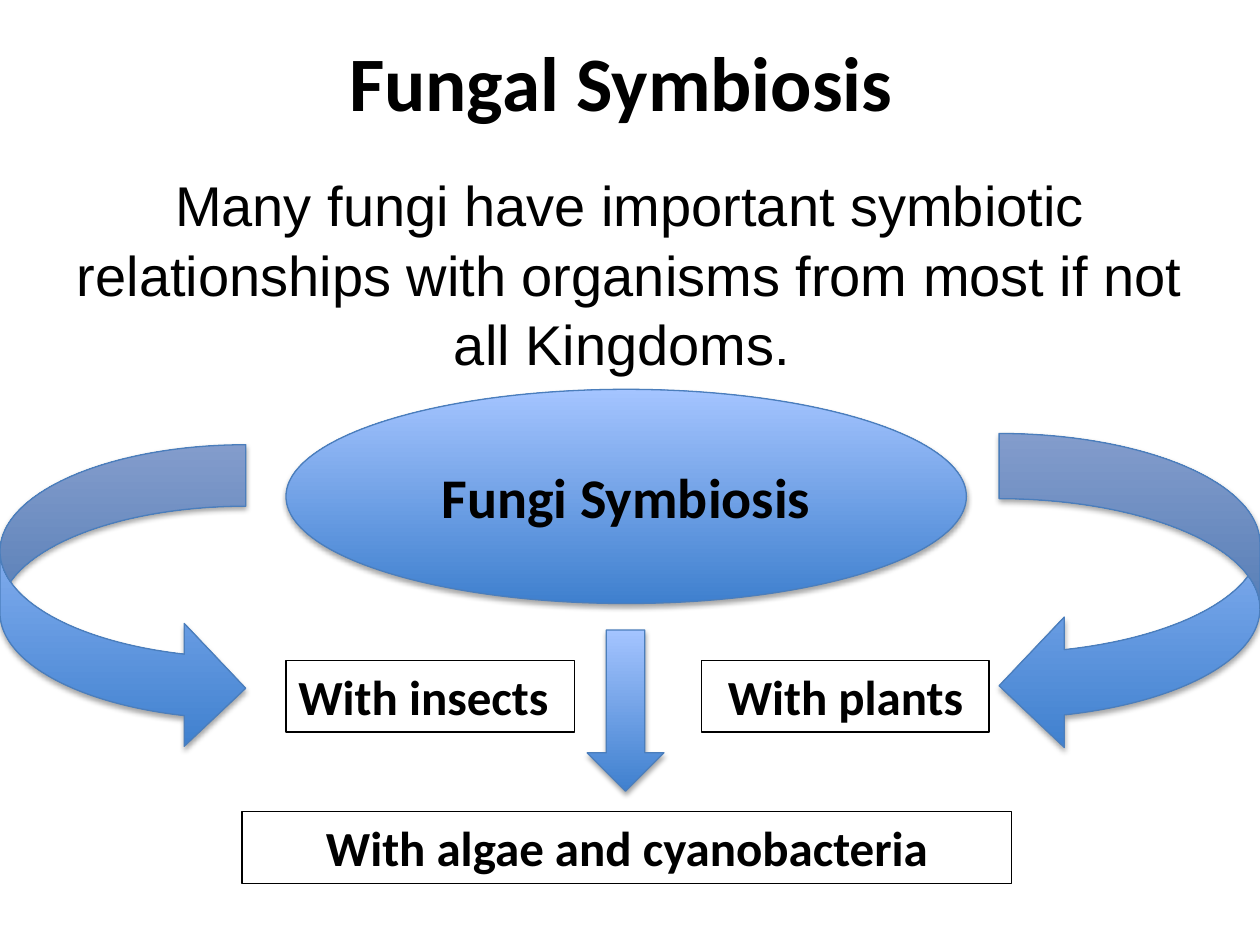
"""Build the Fungal Symbiosis slide."""
from lxml import etree
from pptx import Presentation
from pptx.dml.color import RGBColor
from pptx.enum.shapes import MSO_SHAPE
from pptx.enum.text import MSO_ANCHOR, PP_ALIGN
from pptx.oxml.ns import qn
from pptx.util import Inches, Pt

LEFT, CENTER = PP_ALIGN.LEFT, PP_ALIGN.CENTER
TOP, MIDDLE = MSO_ANCHOR.TOP, MSO_ANCHOR.MIDDLE
OVAL, DOWN = MSO_SHAPE.OVAL, MSO_SHAPE.DOWN_ARROW
CURVE_L, CURVE_R = MSO_SHAPE.CURVED_LEFT_ARROW, MSO_SHAPE.CURVED_RIGHT_ARROW
BLACK = RGBColor(0x00, 0x00, 0x00)
DARK = RGBColor(0x3F, 0x80, 0xCE)
LIGHT = RGBColor(0xA4, 0xC4, 0xFF)
EDGE = RGBColor(0x4B, 0x7E, 0xBC)

TITLE = "Fungal Symbiosis "
INTRO = ("Many fungi have important symbiotic relationships with "
         "organisms from most if not all Kingdoms. ")
HUB = "Fungi Symbiosis"
SHAPES = [
    (OVAL, (2.27, 3.09, 5.4, 1.7), HUB),
    (CURVE_L, (7.93, 3.44, 2.07, 2.52), ""),
    (CURVE_R, (0, 3.53, 1.95, 2.42), ""),
    (DOWN, (4.66, 5, 0.61, 1.28), ""),
]
LABELS = [
    ("With plants", (5.57, 5.24, 2.28, 0.57), CENTER),
    ("With algae and cyanobacteria", (1.92, 6.44, 6.11, 0.57), CENTER),
    ("With insects", (2.27, 5.24, 2.29, 0.57), LEFT),
]


def write(shape, text, size, font="Calibri", bold=True, align=CENTER, anchor=MIDDLE):
    frame = shape.text_frame
    frame.word_wrap = True
    frame.vertical_anchor = anchor
    frame.text = text
    para = frame.paragraphs[0]
    para.alignment = align
    para.font.name = font
    para.font.size = Pt(size)
    para.font.bold = bold
    para.font.color.rgb = BLACK
    return para


def add_shadow(shape):
    shape.shadow.inherit = False
    effects = shape._element.spPr.find(qn("a:effectLst"))
    outer = etree.SubElement(effects, qn("a:outerShdw"), blurRad=str(Pt(3.1)),
                             dist=str(Pt(1.8)), dir="5400000", rotWithShape="0")
    color = etree.SubElement(outer, qn("a:srgbClr"), val=str(BLACK))
    etree.SubElement(color, qn("a:alpha"), val="35000")


def add_glossy(slide, kind, box, text):
    shape = slide.shapes.add_shape(kind, *map(Inches, box))
    shape.fill.gradient()
    shape.fill.gradient_angle = 90
    for stop, color, spot in zip(shape.fill.gradient_stops, (DARK, LIGHT), (0, 1)):
        stop.color.rgb = color
        stop.position = spot
    shape.line.color.rgb = EDGE
    shape.line.width = Pt(0.75)
    add_shadow(shape)
    if text:
        write(shape, text, 32)


def add_label(slide, text, box, align):
    label = slide.shapes.add_textbox(*map(Inches, box))
    label.line.color.rgb = BLACK
    label.line.width = Pt(0.75)
    write(label, text, 28, align=align, anchor=TOP)


def main():
    deck = Presentation()
    deck.slide_width, deck.slide_height = Inches(10), Inches(7.5)
    slide = deck.slides.add_slide(deck.slide_layouts[5])

    title = slide.shapes.title
    title.left, title.top, title.width, title.height = map(Inches, (0.5, 0, 9, 1.28))
    write(title, TITLE, 44)

    intro = slide.shapes.add_textbox(*map(Inches, (0.26, 1.28, 9.48, 6.02)))
    para = write(intro, INTRO, 32, "Arial", False, anchor=TOP)
    para.line_spacing = 1.04

    for kind, box, text in SHAPES:
        add_glossy(slide, kind, box, text)
    for text, box, align in LABELS:
        add_label(slide, text, box, align)
    deck.save("out.pptx")


if __name__ == "__main__":
    main()
